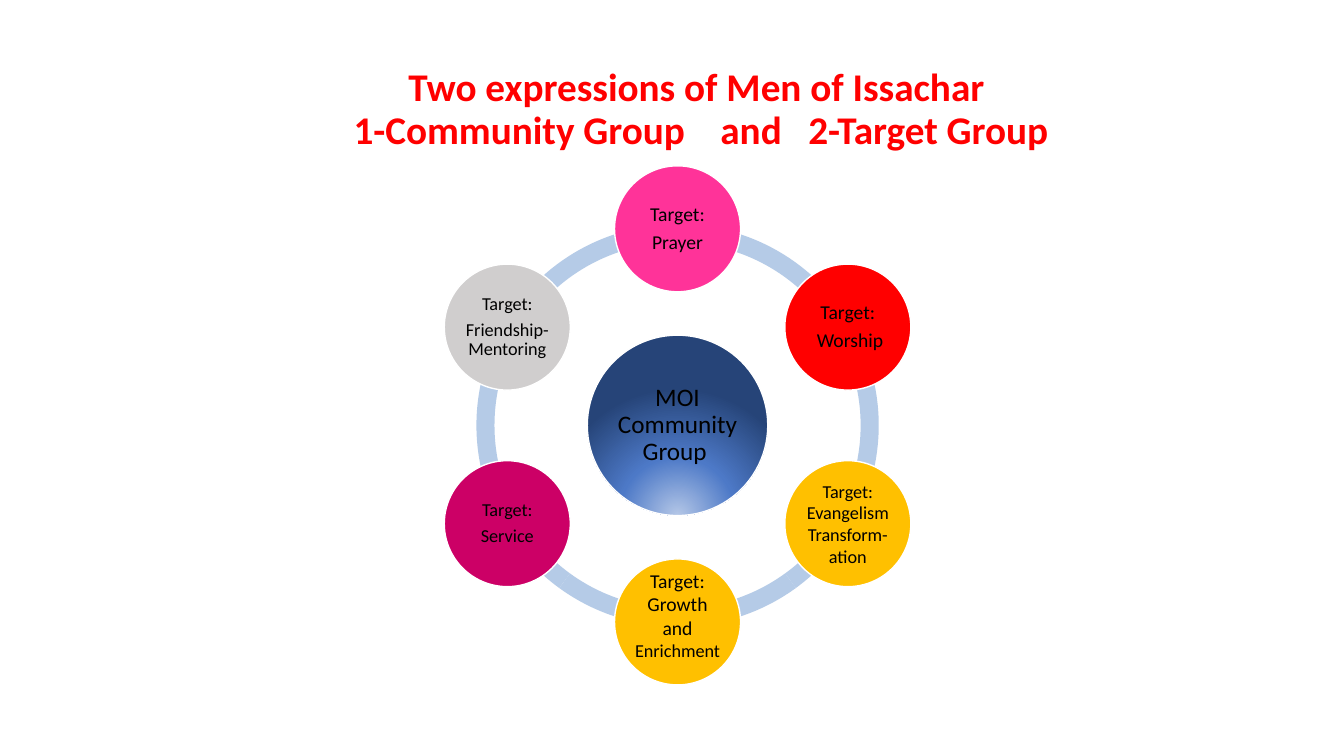
from dataclasses import dataclass
from itertools import pairwise
from math import cos, radians, sin

from pptx import Presentation
from pptx.dml.color import RGBColor
from pptx.enum.shapes import MSO_SHAPE
from pptx.enum.text import MSO_ANCHOR, PP_ALIGN
from pptx.oxml import parse_xml
from pptx.oxml.ns import nsdecls, qn
from pptx.util import Inches, Pt

COLOURS = {
    "white": "FFFFFF", "black": "000000", "red": "FF0000", "ring": "B5CBE7",
    "pink": "FF3399", "gold": "FFC000", "magenta": "CC0066", "grey": "D0CECE",
    "hub_light": "B4C7E7", "hub_mid": "4D79C7", "hub_dark": "264478",
}
CENTRE_X, CENTRE_Y = 6.72, 4.22
RING_SIZE, RING_WIDTH = 3.99, 0.045
RING_ANGLES = [18, 54, 90, 126, 162, 198, 378]
ORBIT, TARGET_SIZE, HUB_SIZE = 1.95, 1.25, 1.79


@dataclass
class Target:
    """A target group: its colour, its paragraphs of (text, size) spans and its layout."""
    colour: str
    paragraphs: list
    spaced: bool = True
    bottom: float = 0.02


TARGETS = [
    Target("pink", [[("Target:", 14)], [("Prayer", 14)]]),
    Target("red", [[("Target:", 14)], [(" Worship", 14)]]),
    Target("gold", [[("Target: Evangelism ", 13)], [("Transform-", 13)], [("ation", 13)]],
           spaced=False),
    Target("gold", [[("Target: Growth and ", 14), ("Enrichment", 13)]],
           spaced=False, bottom=0.16),
    Target("magenta", [[("Target:", 13)], [("Service", 13)]]),
    Target("grey", [[("Target:", 13)], [("Friendship- Mentoring", 13)]]),
]


def colour_of(name):
    """Return the named colour."""
    return RGBColor.from_string(COLOURS[name])


def write_text(frame, paragraphs, colour="black", bold=False, line=0.9, after=0.0):
    """Fill a text frame with centred paragraphs of (text, size) spans."""
    frame.word_wrap = True
    frame.vertical_anchor = MSO_ANCHOR.MIDDLE
    for index, spans in enumerate(paragraphs):
        para = frame.add_paragraph() if index else frame.paragraphs[0]
        para.alignment = PP_ALIGN.CENTER
        para.line_spacing = line
        para.space_before = Pt(0)
        para.space_after = Pt(after * spans[0][1])
        for text, size in spans:
            for number, part in enumerate(text.split("\n")):
                if number:
                    para.add_line_break()
                span = para.add_run()
                span.text = part
                span.font.name = "Calibri"
                span.font.size = Pt(size)
                span.font.bold = bold
                span.font.color.rgb = colour_of(colour)


def add_centred(page, kind, x, y, size, colour):
    """Add a filled square-framed shape around a centre point."""
    shape = page.shapes.add_shape(
        kind, Inches(x - size / 2), Inches(y - size / 2), Inches(size), Inches(size))
    shape.shadow.inherit = False
    shape.fill.solid()
    shape.fill.fore_color.rgb = colour_of(colour)
    shape.line.fill.background()
    return shape


def add_ring(page):
    """Add the arcs that together form the ring."""
    for start, end in pairwise(RING_ANGLES):
        arc = add_centred(page, MSO_SHAPE.BLOCK_ARC, CENTRE_X, CENTRE_Y, RING_SIZE, "ring")
        arc.adjustments[0] = start * 0.6
        arc.adjustments[1] = end % 360 * 0.6
        arc.adjustments[2] = RING_WIDTH


def add_circle(page, x, y, size, colour, paragraphs, spaced=True, inset=0.02, bottom=0.02):
    """Add a white-edged circle with its text."""
    circle = add_centred(page, MSO_SHAPE.OVAL, x, y, size, colour)
    circle.line.color.rgb = colour_of("white")
    circle.line.width = Pt(1)
    frame = circle.text_frame
    frame.margin_left = frame.margin_right = frame.margin_top = Inches(inset)
    frame.margin_bottom = Inches(bottom)
    write_text(frame, paragraphs, line=0.9 if spaced else 1.0, after=0.35 if spaced else 0)
    return circle


def shade_hub(hub):
    """Give the hub a radial gradient that glows from below."""
    stops = [(0, "hub_light"), (46, "hub_mid"), (100, "hub_dark")]
    stop_xml = "".join(
        f'<a:gs pos="{place * 1000}"><a:srgbClr val="{COLOURS[name]}"/></a:gs>'
        for place, name in stops)
    gradient = parse_xml(
        f'<a:gradFill {nsdecls("a")} rotWithShape="1"><a:gsLst>{stop_xml}</a:gsLst>'
        '<a:path path="circle"><a:fillToRect l="50000" t="130000" r="50000" b="-30000"/>'
        '</a:path></a:gradFill>')
    properties = hub._element.spPr
    properties.replace(properties.find(qn("a:solidFill")), gradient)


def add_title(page):
    """Place and format the title."""
    title = page.shapes.title
    title.left, title.top = Inches(1.2), Inches(0.37)
    title.width, title.height = Inches(11.5), Inches(1.45)
    title.fill.solid()
    title.fill.fore_color.rgb = colour_of("white")
    text = "Two expressions of Men of Issachar \n1-Community Group    and   2-Target Group"
    write_text(title.text_frame, [[(text, 28)]], colour="red", bold=True)


def main():
    """Build the slide and save it."""
    deck = Presentation()
    deck.slide_width, deck.slide_height = Inches(13.33), Inches(7.5)
    page = deck.slides.add_slide(deck.slide_layouts[5])
    add_title(page)
    add_ring(page)
    hub = add_circle(page, CENTRE_X, CENTRE_Y, HUB_SIZE, "hub_mid",
                     [[("MOI Community Group ", 18)]], inset=0.03, bottom=0.03)
    shade_hub(hub)
    for index, target in enumerate(TARGETS):
        angle = radians(index * 360 / len(TARGETS) - 90)
        add_circle(page, CENTRE_X + ORBIT * cos(angle), CENTRE_Y + ORBIT * sin(angle),
                   TARGET_SIZE, target.colour, target.paragraphs,
                   spaced=target.spaced, bottom=target.bottom)
    deck.save("out.pptx")


if __name__ == "__main__":
    main()
